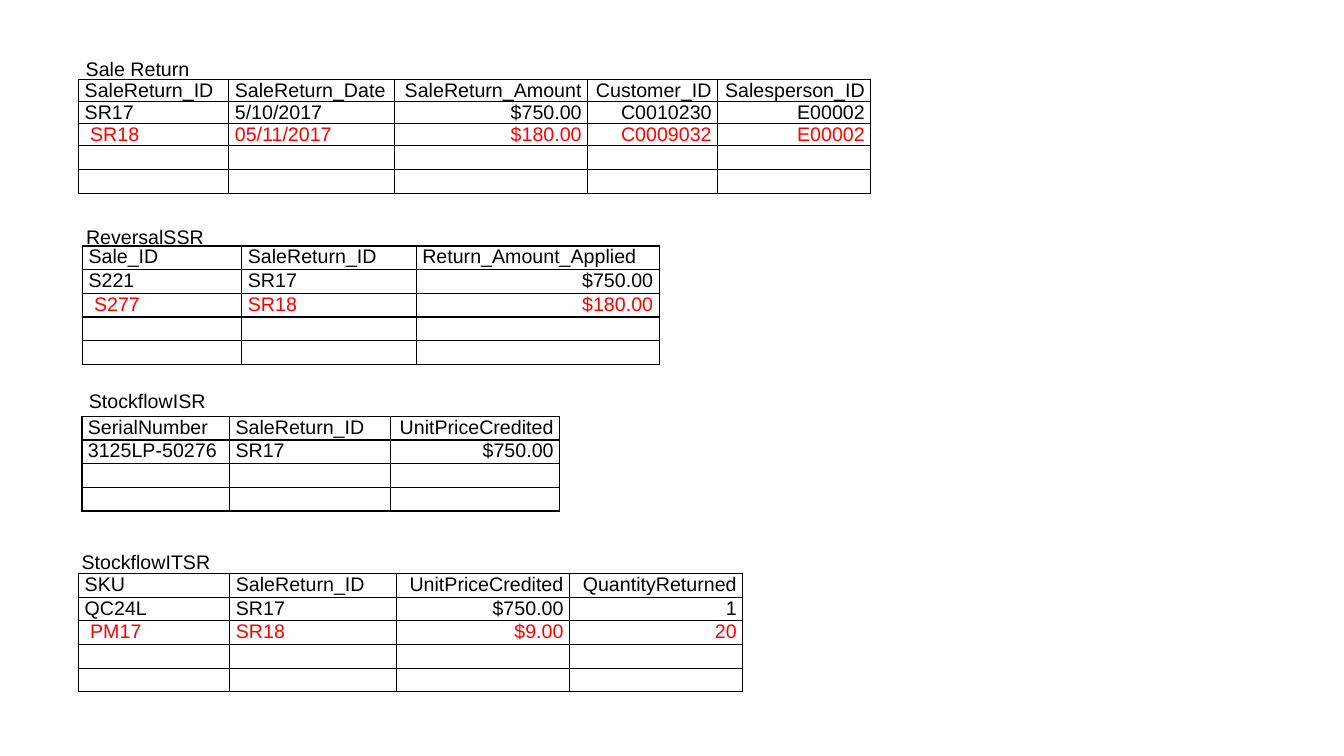
import pptx
import pptx.dml.color
import pptx.enum.text
import pptx.oxml
import pptx.oxml.ns
import pptx.util

Pt = pptx.util.Pt
ALIGN = {"l": pptx.enum.text.PP_ALIGN.LEFT, "r": pptx.enum.text.PP_ALIGN.RIGHT}
MIDDLE = pptx.enum.text.MSO_ANCHOR.MIDDLE


def colour(hex_code):
    return pptx.dml.color.RGBColor.from_string(hex_code)


class Sheet:
    font, size = "Arial", 14
    ink, highlight = "000000", "FF0000"
    caption_height = 22.3
    cell_margin = 4.3

    def __init__(self, slide):
        self.slide = slide

    def set_text(self, frame, text, ink, align="l"):
        paragraph = frame.paragraphs[0]
        paragraph.text = text
        paragraph.alignment = ALIGN[align]
        for run in paragraph.runs:
            run.font.name = self.font
            run.font.size = Pt(self.size)
            run.font.color.rgb = colour(ink)

    def caption(self, text, left, top, width):
        box = self.slide.shapes.add_textbox(
            Pt(left), Pt(top), Pt(width), Pt(self.caption_height))
        frame = box.text_frame
        frame.word_wrap = True
        frame.vertical_anchor = MIDDLE
        frame.margin_left = frame.margin_right = Pt(5)
        frame.margin_top = frame.margin_bottom = Pt(2.9)
        self.set_text(frame, text, self.ink)

    def outline(self, cell):
        """Give the cell a 1 pt border on every side and no fill."""
        properties = cell._tc.get_or_add_tcPr()
        for side in "LRTB":
            properties.append(pptx.oxml.parse_xml(
                f'<a:ln{side} {pptx.oxml.ns.nsdecls("a")} w="{Pt(1)}">'
                f'<a:solidFill><a:srgbClr val="{self.ink}"/></a:solidFill>'
                f'</a:ln{side}>'))
        cell.fill.background()

    def keep_low(self, cell):
        """Set the text size of an empty cell so that its row does not grow."""
        cell.text_frame.paragraphs[0]._p.append(pptx.oxml.parse_xml(
            f'<a:endParaRPr {pptx.oxml.ns.nsdecls("a")} sz="{self.size * 100}"/>'))

    def table(self, left, top, widths, row_height, header_align, body_align, records, blank_rows):
        """Draw a header, its records (the third line highlighted) and blank rows."""
        rows = records + [[""] * len(widths)] * blank_rows
        grid = self.slide.shapes.add_table(
            len(rows), len(widths), Pt(left), Pt(top),
            Pt(sum(widths)), Pt(row_height * len(rows))).table
        grid.first_row = grid.horz_banding = False
        for column, width in zip(grid.columns, widths):
            column.width = Pt(width)
        for r, values in enumerate(rows):
            grid.rows[r].height = Pt(row_height)
            aligns = body_align if r else header_align
            for c, value in enumerate(values):
                cell = grid.cell(r, c)
                cell.margin_left = cell.margin_right = Pt(self.cell_margin)
                cell.margin_top = cell.margin_bottom = 0
                self.outline(cell)
                if value:
                    ink = self.highlight if r == 2 else self.ink
                    self.set_text(cell.text_frame, value, ink, aligns[c])
                else:
                    self.keep_low(cell)


def main():
    deck = pptx.Presentation()
    deck.slide_width, deck.slide_height = Pt(960), Pt(540)
    sheet = Sheet(deck.slides.add_slide(deck.slide_layouts[6]))

    sheet.table(56.2, 56.9, [107.3, 118.1, 138.2, 92.9, 109.4], 15.75, "llrrr", "llrrr", [
        ["SaleReturn_ID", "SaleReturn_Date", "SaleReturn_Amount", "Customer_ID", "Salesperson_ID"],
        ["SR17", "5/10/2017", "$750.00", "C0010230", "E00002"],
        [" SR18", "05/11/2017", "$180.00", "C0009032", "E00002"],
    ], 2)
    sheet.caption("Sale Return", 56.2, 38.2, 350)

    sheet.table(59, 175.7, [113.8, 124.6, 173.5], 16.9, "lll", "llr", [
        ["Sale_ID", "SaleReturn_ID", "Return_Amount_Applied"],
        ["S221", "SR17", "$750.00"],
        [" S277", "SR18", "$180.00"],
    ], 2)
    sheet.caption("ReversalSSR", 56.5, 158, 233)

    sheet.table(58.5, 297.4, [105.5, 115.2, 120.6], 16.9, "llr", "llr", [
        ["SerialNumber", "SaleReturn_ID", "UnitPriceCredited"],
        ["3125LP-50276", "SR17", "$750.00"],
    ], 2)
    sheet.caption("StockflowISR", 58.5, 275, 216)

    sheet.table(56.2, 409.7, [108, 118.8, 123.8, 123.8], 16.9, "llrr", "llrr", [
        ["SKU", "SaleReturn_ID", "UnitPriceCredited", "QuantityReturned"],
        ["QC24L", "SR17", "$750.00", "1"],
        [" PM17", "SR18", "$9.00", "20"],
    ], 2)
    sheet.caption("StockflowITSR", 53.3, 390.2, 121)

    deck.save("out.pptx")


if __name__ == "__main__":
    main()
